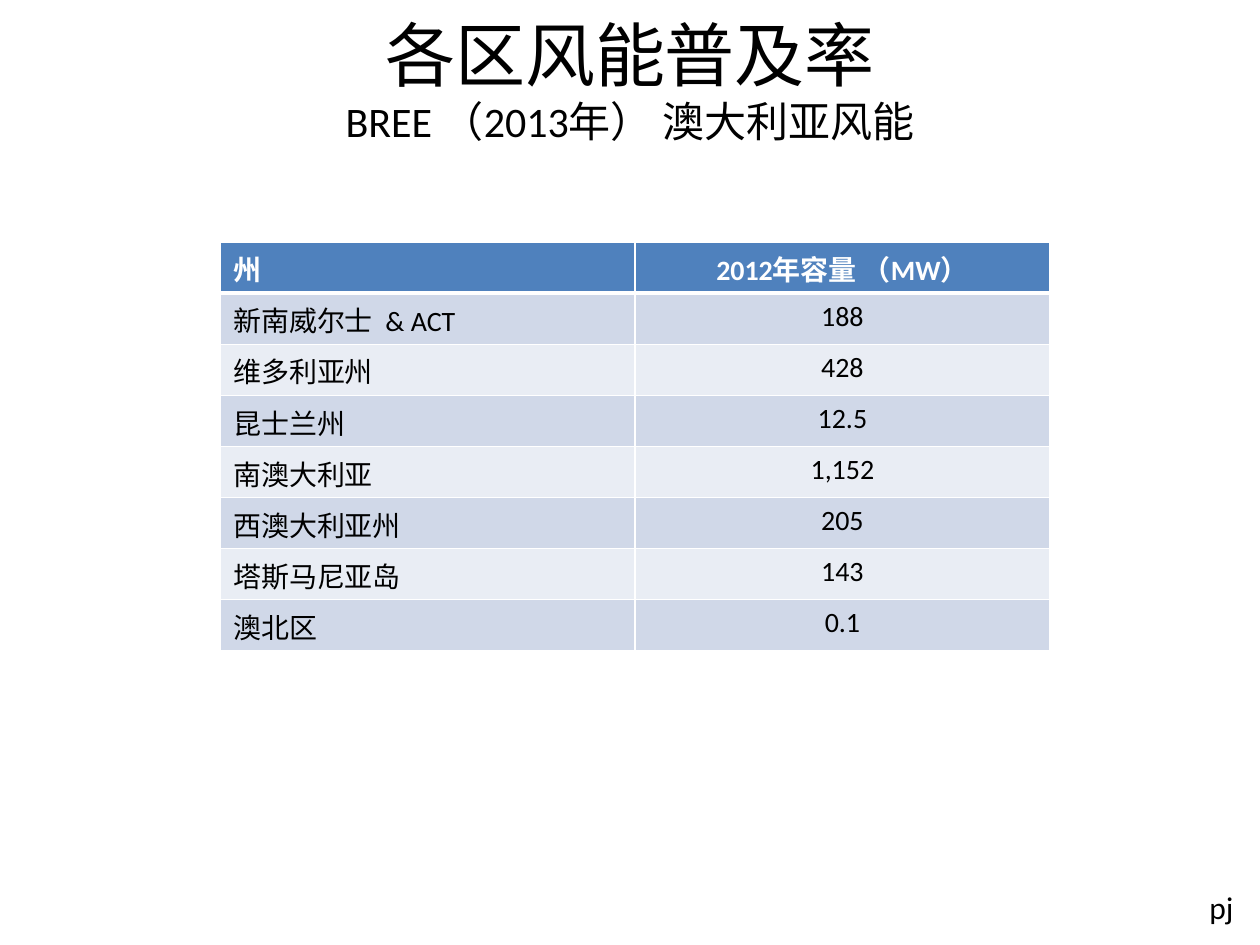
from lxml import etree
from pptx import Presentation
from pptx.dml.color import RGBColor
from pptx.enum import text
from pptx.oxml import ns
from pptx.util import Cm, Pt

FONT = "Calibri"
BLACK, WHITE, HEADER_BLUE = "000000", "FFFFFF", "4F81BD"
BANDS = ("D0D8E8", "E9EDF4")
CAPACITIES = [
    ("州", "2012年容量 （MW）"),
    ("新南威尔士  & ACT", "188"),
    ("维多利亚州", "428"),
    ("昆士兰州", "12.5"),
    ("南澳大利亚", "1,152"),
    ("西澳大利亚州", "205"),
    ("塔斯马尼亚岛", "143"),
    ("澳北区", "0.1"),
]


def color(value):
    return RGBColor.from_string(value)


def style_span(span, size, ink=BLACK, bold=False):
    span.font.name = FONT
    span.font.size = Pt(size)
    span.font.bold = bold
    span.font.color.rgb = color(ink)


def place_title(page, left, top, width, height):
    title = page.shapes.title
    title.left, title.top, title.width, title.height = left, top, width, height
    frame = title.text_frame
    frame.text = "各区风能普及率\vBREE （2013年） 澳大利亚风能"
    frame.auto_size = text.MSO_AUTO_SIZE.NONE
    frame.vertical_anchor = text.MSO_ANCHOR.MIDDLE
    para = frame.paragraphs[0]
    para.alignment = text.PP_ALIGN.CENTER
    for span, size in zip(para.runs, (40, 24)):
        style_span(span, size)


def draw_borders(cell, top, bottom):
    """Give the cell white edges; top and bottom are widths in points."""
    properties = cell._tc.get_or_add_tcPr()
    for side, width in (("L", 1), ("R", 1), ("T", top), ("B", bottom)):
        line = etree.SubElement(properties, ns.qn(f"a:ln{side}"), w=str(Pt(width)))
        fill = etree.SubElement(line, ns.qn("a:solidFill"))
        etree.SubElement(fill, ns.qn("a:srgbClr"), val=WHITE)


def place_capacity_table(page, left, top, width, height):
    row_count, column_count = len(CAPACITIES), len(CAPACITIES[0])
    table = page.shapes.add_table(
        row_count, column_count, left, top, width, height).table
    for row, values in enumerate(CAPACITIES):
        header = row == 0
        for column, value in enumerate(values):
            cell = table.cell(row, column)
            draw_borders(cell, top=3 if row == 1 else 1, bottom=3 if header else 1)
            cell.fill.solid()
            cell.fill.fore_color.rgb = color(
                HEADER_BLUE if header else BANDS[(row - 1) % 2])
            cell.text_frame.text = value
            para = cell.text_frame.paragraphs[0]
            if column:
                para.alignment = text.PP_ALIGN.CENTER
            style_span(para.runs[0], 16, WHITE if header else BLACK, header)


def place_initials(page, left, top, width, height):
    box = page.shapes.add_textbox(left, top, width, height)
    box.text_frame.text = "pj"
    style_span(box.text_frame.paragraphs[0].runs[0], 18)


def main():
    deck = Presentation()
    deck.slide_width, deck.slide_height = Cm(25.4), Cm(19.05)
    page = deck.slides.add_slide(deck.slide_layouts[5])
    place_initials(page, Cm(24.13), Cm(17.78), Cm(1.07), Cm(1.07))
    place_title(page, Cm(1.27), Cm(0), Cm(22.86), Cm(3.18))
    place_capacity_table(page, Cm(4.45), Cm(4.88), Cm(16.71), Cm(8.24))
    deck.save("out.pptx")


if __name__ == "__main__":
    main()
